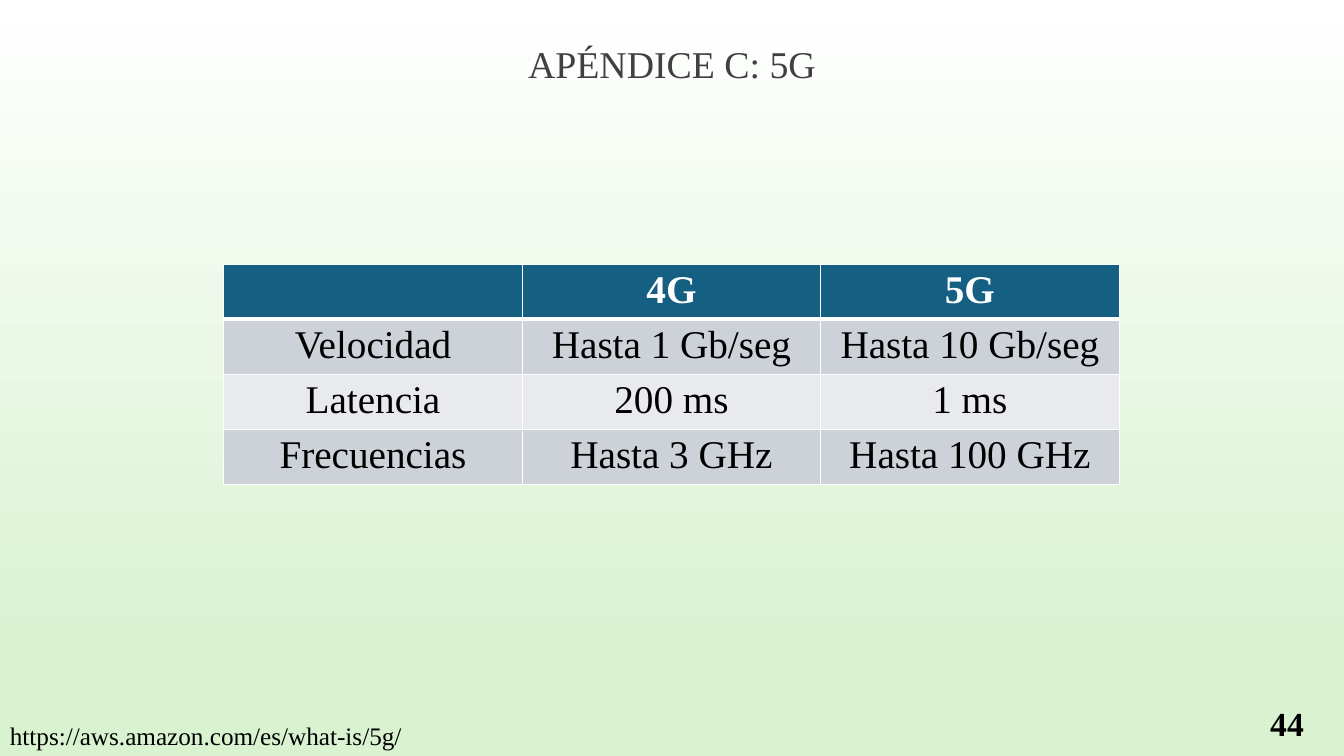
from lxml.etree import SubElement
from pptx import Presentation
from pptx.dml.color import RGBColor
from pptx.enum.text import MSO_ANCHOR as Anchor, PP_ALIGN as Align
from pptx.oxml.ns import qn
from pptx.util import Inches, Pt

WHITE = RGBColor(0xFF, 0xFF, 0xFF)
BLACK = RGBColor(0x00, 0x00, 0x00)
GRAY = RGBColor(0x40, 0x40, 0x40)
GREEN = RGBColor(0xD9, 0xF2, 0xD0)
BLUE = RGBColor(0x15, 0x60, 0x82)
BAND_DARK = RGBColor(0xCC, 0xD2, 0xD8)
BAND_LIGHT = RGBColor(0xE8, 0xEA, 0xED)

COMPARISON = [
    ["", "4G", "5G"],
    ["Velocidad", "Hasta 1 Gb/seg", "Hasta 10 Gb/seg"],
    ["Latencia", "200 ms", "1 ms"],
    ["Frecuencias", "Hasta 3 GHz", "Hasta 100 GHz"],
]


class SlideBuilder:
    font_name = "Times New Roman"
    column_width = 2.96
    row_height = 0.53
    cell_margin = 0.04

    def __init__(self, slide):
        self.slide = slide

    def background(self, top, bottom, end):
        """Fade downwards from top to bottom colour, reached at the fraction end."""
        fill = self.slide.background.fill
        fill.gradient()
        fill.gradient_angle = 270
        for stop, color, position in zip(fill.gradient_stops, (top, bottom), (0, end)):
            stop.color.rgb = color
            stop.position = position

    def style_text(self, paragraph, text, size, color, align, bold=False):
        paragraph.text = text
        paragraph.alignment = align
        values = {"name": self.font_name, "size": Pt(size), "bold": bold}
        for name, value in values.items():
            setattr(paragraph.font, name, value)
        paragraph.font.color.rgb = color

    def text(self, box, text, size, color=BLACK, align=Align.LEFT,
             anchor=Anchor.TOP, bold=False, spacing=1.0):
        shape = self.slide.shapes.add_textbox(*map(Inches, box))
        frame = shape.text_frame
        frame.word_wrap = True
        frame.vertical_anchor = anchor
        paragraph = frame.paragraphs[0]
        self.style_text(paragraph, text, size, color, align, bold)
        paragraph.line_spacing = spacing

    def border(self, cell, widths):
        """Draw white edges; widths maps L, R, T and B to points."""
        properties = cell._tc.get_or_add_tcPr()
        for side, width in widths.items():
            line = SubElement(properties, qn(f"a:ln{side}"), w=str(Pt(width)))
            fill = SubElement(line, qn("a:solidFill"))
            SubElement(fill, qn("a:srgbClr"), val=str(WHITE))

    def table(self, left, top, rows, size):
        width = self.column_width * len(rows[0])
        height = self.row_height * len(rows)
        frame = self.slide.shapes.add_table(
            len(rows), len(rows[0]), *map(Inches, (left, top, width, height)))
        table = frame.table
        for column in table.columns:
            column.width = Inches(self.column_width)
        for row_index, values in enumerate(rows):
            table.rows[row_index].height = Inches(self.row_height)
            header = row_index == 0
            band = BAND_DARK if row_index % 2 else BAND_LIGHT
            widths = {"L": 1, "R": 1, "T": 3 if row_index == 1 else 1,
                      "B": 3 if header else 1}
            for column_index, value in enumerate(values):
                cell = table.cell(row_index, column_index)
                self.border(cell, widths)
                cell.fill.solid()
                cell.fill.fore_color.rgb = BLUE if header else band
                cell.margin_top = cell.margin_bottom = Inches(self.cell_margin)
                self.style_text(cell.text_frame.paragraphs[0], value, size,
                                WHITE if header else BLACK, Align.CENTER, header)


def main():
    presentation = Presentation()
    presentation.slide_width = Inches(13.33)
    presentation.slide_height = Inches(7.5)
    builder = SlideBuilder(presentation.slides.add_slide(presentation.slide_layouts[6]))
    builder.background(WHITE, GREEN, 0.86)
    builder.text((1.25, 0.31, 10.83, 0.69), "APÉNDICE C: 5G", 27, GRAY,
                 Align.CENTER, Anchor.MIDDLE, spacing=0.9)
    builder.text((11.98, 6.97, 1.05, 0.4), "44", 24, align=Align.RIGHT,
                 anchor=Anchor.MIDDLE, bold=True)
    builder.table(2.22, 2.62, COMPARISON, 28)
    builder.text((0, 7.1, 5.37, 0.4), "https://aws.amazon.com/es/what-is/5g/", 18)
    presentation.save("out.pptx")


if __name__ == "__main__":
    main()
